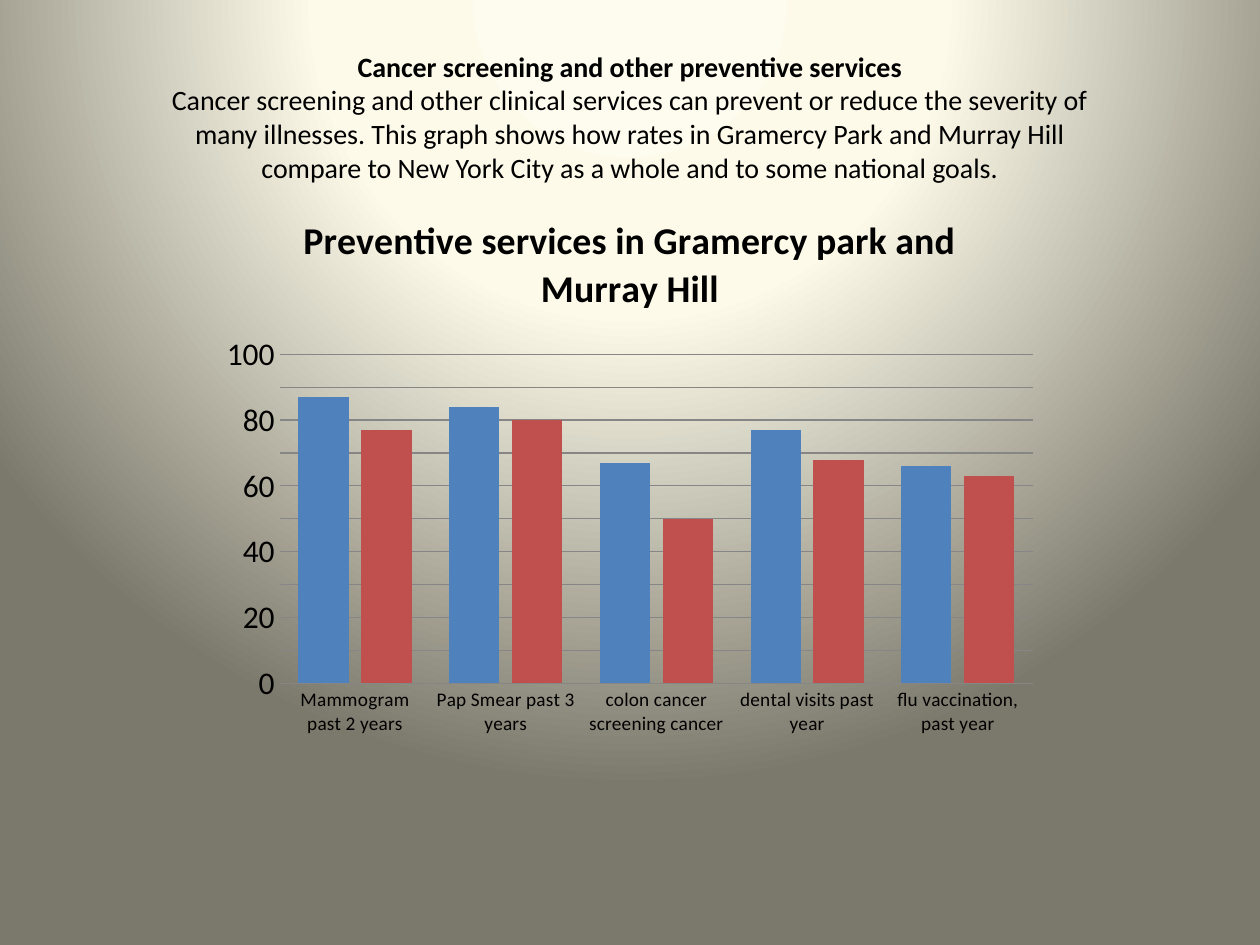
from pptx import Presentation
from pptx.chart.data import CategoryChartData as Data
from pptx.dml.color import RGBColor as RGB
from pptx.enum.chart import XL_CHART_TYPE as Kind, XL_TICK_MARK as Tick
from pptx.enum.text import MSO_ANCHOR as Anchor, PP_ALIGN as Align
from pptx.oxml import parse_xml
from pptx.oxml.ns import nsdecls
from pptx.util import Inches, Pt

HUES = {"text": "000000", "grid": "868686", "blue": "4F81BD", "red": "C0504D"}
GLOW = [(0, "FEFCEE"), (40, "FDFAEA"), (100, "7B796B")]
HEAD = "Cancer screening and other preventive services"
BODY = [
    "Cancer screening and other clinical services can prevent or reduce the severity of",
    "many illnesses. This graph shows how rates in Gramercy Park and Murray Hill",
    "compare to New York City as a whole and to some national goals.",
]
NAME = "Preventive services in Gramercy park and Murray Hill"
CATS = ["Mammogram past 2 years", "Pap Smear past 3 years",
        "colon cancer screening cancer", "dental visits past year",
        "flu vaccination, past year"]
ROWS = [("Series 1", "blue", [87, 84, 67, 77, 66]),
        ("Series 2", "red", [77, 80, 50, 68, 63])]
WIDE, HIGH = Inches(10), Inches(7.5)


def area(x, y, w, h):
    """Turn shares of the slide into a box."""
    return int(x * WIDE), int(y * HIGH), int(w * WIDE), int(h * HIGH)


def style(font, size, bold=False):
    for key, val in {"name": "Calibri", "size": Pt(size), "bold": bold}.items():
        setattr(font, key, val)
    font.color.rgb = RGB.from_string(HUES["text"])


def glow(slide):
    stops = "".join(f'<a:gs pos="{pos * 1000}"><a:srgbClr val="{hue}"/></a:gs>'
                    for pos, hue in GLOW)
    back = parse_xml(
        f'<p:bg {nsdecls("p", "a")}><p:bgPr><a:gradFill rotWithShape="1">'
        f'<a:gsLst>{stops}</a:gsLst><a:path path="circle">'
        '<a:fillToRect l="50000" t="-80000" r="50000" b="180000"/></a:path>'
        '</a:gradFill><a:effectLst/></p:bgPr></p:bg>')
    slide.element.cSld.insert(0, back)


def intro(slide, box):
    frame = slide.shapes.add_textbox(*box).text_frame
    frame.word_wrap = True
    frame.vertical_anchor = Anchor.MIDDLE
    para = frame.paragraphs[0]
    para.alignment = Align.CENTER
    for i, line in enumerate([HEAD, *BODY]):
        if i:
            para.add_line_break()
        run = para.add_run()
        run.text = line
        style(run.font, 16, bold=i == 0)


def graph(slide, box):
    data = Data()
    data.categories = CATS
    for name, _, vals in ROWS:
        data.add_series(name, vals)
    chart = slide.shapes.add_chart(Kind.COLUMN_CLUSTERED, *box, data).chart
    style(chart.font, 18)
    chart.has_legend = False

    # Heading
    chart.has_title = True
    para = chart.chart_title.text_frame.paragraphs[0]
    run = para.add_run()
    run.text = NAME
    style(run.font, 21.6, bold=True)
    chart.chart_title.include_in_layout = False

    # Bars
    plot = chart.plots[0]
    for key, val in {"gap_width": 75, "overlap": -25,
                     "vary_by_categories": False}.items():
        setattr(plot, key, val)
    for bars, (_, hue, _) in zip(plot.series, ROWS):
        bars.format.fill.solid()
        bars.format.fill.fore_color.rgb = RGB.from_string(HUES[hue])

    # Axes
    cat, val = chart.category_axis, chart.value_axis
    for axis, size in ((cat, 11), (val, 18)):
        axis.major_tick_mark = axis.minor_tick_mark = Tick.NONE
        style(axis.tick_labels.font, size)
    for key, num in {"minimum_scale": 0, "maximum_scale": 100,
                     "major_unit": 10}.items():
        setattr(val, key, num)
    val.format.line.fill.background()
    for line in (cat.format.line, val.major_gridlines.format.line):
        line.color.rgb = RGB.from_string(HUES["grid"])
        line.width = Pt(0.75)


def main():
    deck = Presentation()
    deck.slide_width, deck.slide_height = WIDE, HIGH
    slide = deck.slides.add_slide(deck.slide_layouts[6])
    glow(slide)
    intro(slide, area(0.05, 0.04, 0.9, 1 / 6))
    graph(slide, area(1 / 6, 0.2, 2 / 3, 0.59))
    deck.save("out.pptx")


if __name__ == "__main__":
    main()
